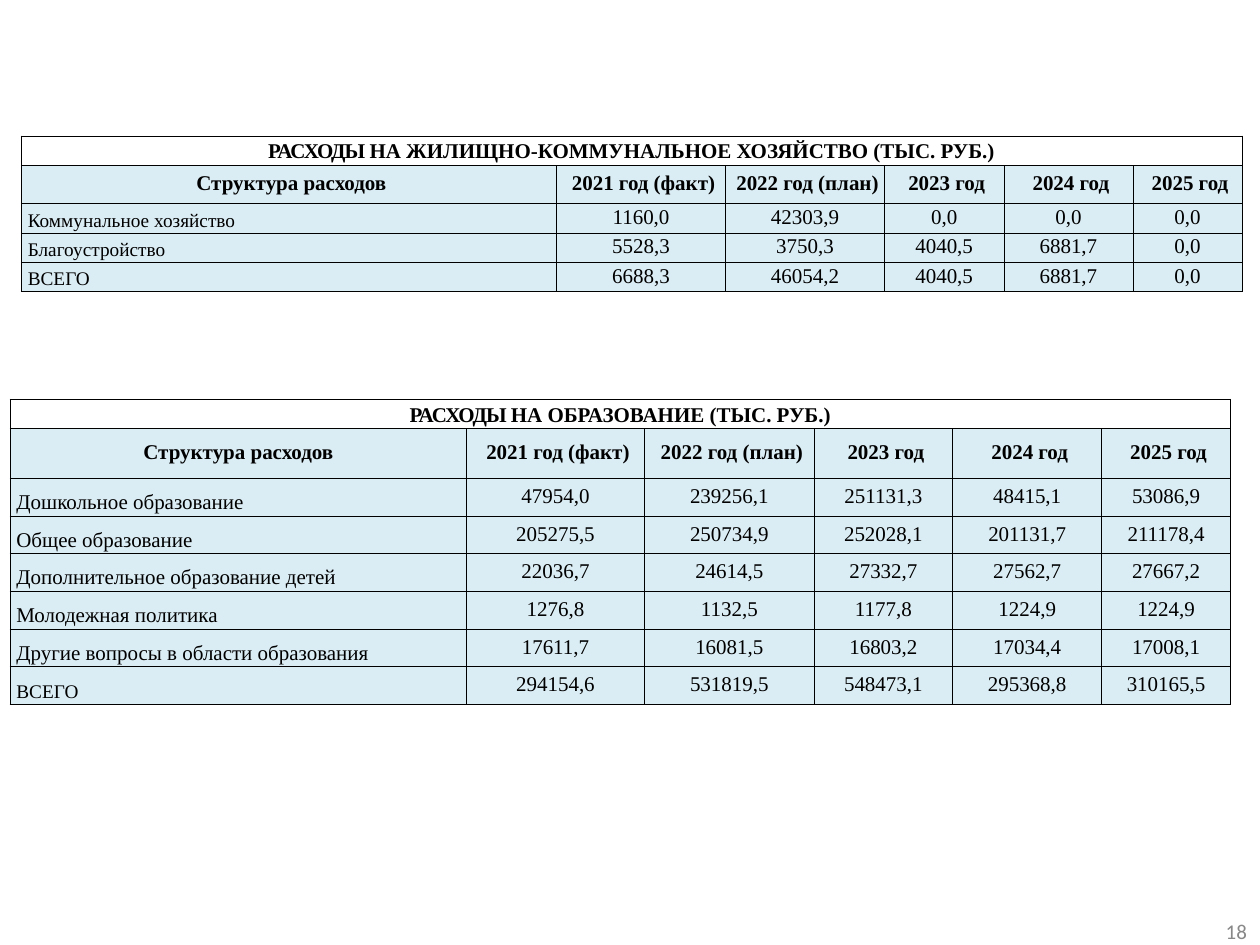
from lxml import etree
from pptx import Presentation
from pptx import util as u
from pptx.dml import color
from pptx.enum import text
from pptx.oxml import ns

HUE = {"ink": "000000", "cell": "DBEDF4", "page": "888888"}
SERIF = "Times New Roman"
HEAD = ["Структура расходов", "2021 год (факт)", "2022 год (план)",
        "2023 год", "2024 год", "2025 год"]

# Each table: place, grid, top insets in cm, label size and line height in pt
TABLES = [
    dict(
        left=0.43, top=2.74, title="ЖИЛИЩНО-КОММУНАЛЬНОЕ ХОЗЯЙСТВО",
        cols=[10.79, 3.41, 3.2, 2.41, 2.6, 2.2],
        rows=[0.6, 0.77] + [0.59] * 3,
        inset=dict(title=0.07, head=0.13, label=0.12, num=0.04, total=0.12),
        size=11, line=12.5, indent=None,
        data=[
            ["Коммунальное хозяйство", "1160,0", "42303,9", "0,0", "0,0", "0,0"],
            ["Благоустройство", "5528,3", "3750,3", "4040,5", "6881,7", "0,0"],
            ["ВСЕГО", "6688,3", "46054,2", "4040,5", "6881,7", "0,0"],
        ]),
    dict(
        left=0.2, top=8.05, title="ОБРАЗОВАНИЕ",
        cols=[9.2, 3.6, 3.41, 2.8, 3, 2.6],
        rows=[0.59, 1] + [0.76] * 6,
        inset=dict(title=0.08, head=0.25, label=0.24, num=0.13, total=0.29),
        size=12, line=13.7, indent=2.69,
        data=[
            ["Дошкольное образование",
             "47954,0", "239256,1", "251131,3", "48415,1", "53086,9"],
            ["Общее образование",
             "205275,5", "250734,9", "252028,1", "201131,7", "211178,4"],
            ["Дополнительное образование детей",
             "22036,7", "24614,5", "27332,7", "27562,7", "27667,2"],
            ["Молодежная политика",
             "1276,8", "1132,5", "1177,8", "1224,9", "1224,9"],
            ["Другие вопросы в области образования",
             "17611,7", "16081,5", "16803,2", "17034,4", "17008,1"],
            ["ВСЕГО",
             "294154,6", "531819,5", "548473,1", "295368,8", "310165,5"],
        ]),
]


def frame(cell):
    """Draw a thin line on all four sides of a cell."""
    props = cell._tc.get_or_add_tcPr()
    for side in ("lnL", "lnR", "lnT", "lnB"):
        line = etree.SubElement(props, ns.qn("a:" + side), w="6350")
        fill = etree.SubElement(line, ns.qn("a:solidFill"))
        etree.SubElement(fill, ns.qn("a:srgbClr"), val=HUE["ink"])


def style(par, size, font, hue, bold=False):
    """Format every run of a paragraph."""
    for run in par.runs:
        run.font.size = u.Pt(size)
        run.font.name = font
        run.font.bold = bold
        run.font.color.rgb = color.RGBColor.from_string(HUE[hue])


deck = Presentation()
deck.slide_width, deck.slide_height = u.Cm(25.4), u.Cm(19.05)
slide = deck.slides.add_slide(deck.slide_layouts[6])

# Spending tables
for spec in TABLES:
    grid = slide.shapes.add_table(
        len(spec["rows"]), len(HEAD), u.Cm(spec["left"]), u.Cm(spec["top"]),
        u.Cm(sum(spec["cols"])), u.Cm(sum(spec["rows"]))).table
    grid.first_row = grid.horz_banding = False
    for col, width in zip(grid.columns, spec["cols"]):
        col.width = u.Cm(width)
    for row, height in zip(grid.rows, spec["rows"]):
        row.height = u.Cm(height)

    # Title row across all columns
    for cell in grid.rows[0].cells:
        frame(cell)
        cell.fill.background()
    top = grid.cell(0, 0)
    top.merge(grid.cell(0, len(HEAD) - 1))
    top.margin_left = top.margin_right = top.margin_bottom = 0
    top.margin_top = u.Cm(spec["inset"]["title"])
    par = top.text_frame.paragraphs[0]
    par.alignment = text.PP_ALIGN.CENTER
    par.line_spacing = u.Pt(13.7)
    par.add_run().text = "РАСХОДЫ "
    par.add_run().text = f"НА {spec['title']} (ТЫС. РУБ.)"
    style(par, 12, SERIF, "ink", True)
    par.runs[0]._r.get_or_add_rPr().set("spc", "-60")

    # Header and body rows
    for r, words in enumerate([HEAD] + spec["data"], 1):
        for c, word in enumerate(words):
            cell = grid.cell(r, c)
            frame(cell)
            cell.fill.solid()
            cell.fill.fore_color.rgb = color.RGBColor.from_string(HUE["cell"])
            cell.margin_left = cell.margin_right = cell.margin_bottom = 0
            cell.text_frame.text = word
            par = cell.text_frame.paragraphs[0]
            par.alignment = text.PP_ALIGN.CENTER
            kind, size = "num", 12
            if r == 1:
                kind = "head"
                cell.margin_left = u.Cm(0.1)
                if c == 0 and spec["indent"]:
                    par.alignment = text.PP_ALIGN.LEFT
                    cell.margin_left = u.Cm(spec["indent"])
            elif c == 0:
                last = word == "ВСЕГО"
                kind = "total" if last else "label"
                size = 11 if last else spec["size"]
                par.alignment = text.PP_ALIGN.LEFT
                par.line_spacing = u.Pt(12.4 if last else spec["line"])
                cell.margin_left = u.Cm(0.13)
            cell.margin_top = u.Cm(spec["inset"][kind])
            style(par, size, SERIF, "ink", r == 1)

# Page number
box = slide.shapes.add_textbox(u.Cm(24.61), u.Cm(18.34), u.Cm(0.69), u.Cm(0.64))
body = box.text_frame
body.word_wrap = True
body.margin_left, body.margin_top = u.Cm(0.1), u.Cm(0.25)
body.margin_right = body.margin_bottom = 0
body.text = "18"
body.paragraphs[0].line_spacing = u.Pt(12.4)
style(body.paragraphs[0], 12, "Calibri", "page")

deck.save("out.pptx")
